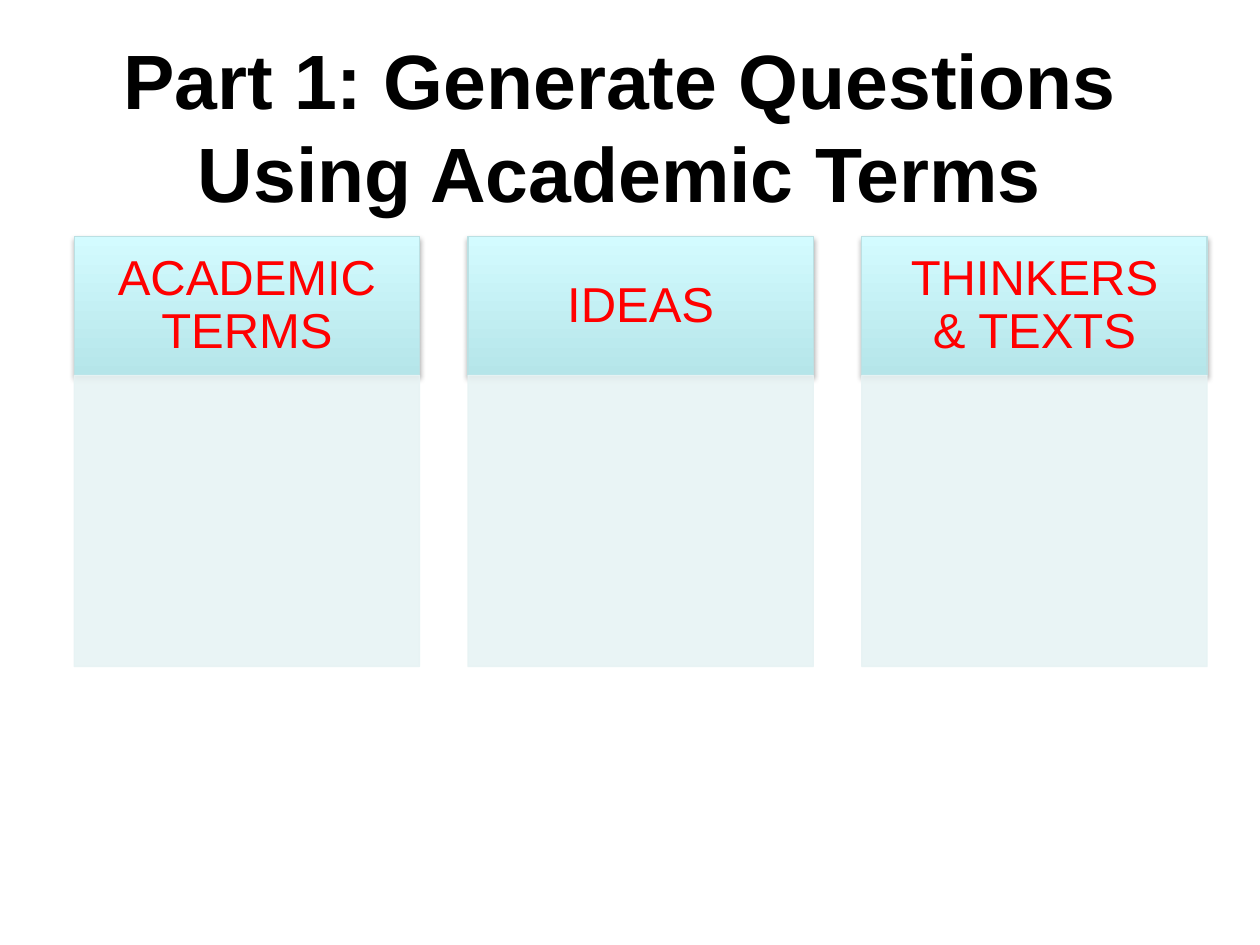
from lxml import etree
from pptx import Presentation
from pptx import util as u
from pptx.dml.color import RGBColor
from pptx.enum import shapes, text
from pptx.oxml.ns import qn

BLACK = RGBColor(0x00, 0x00, 0x00)
RED = RGBColor(0xFF, 0x00, 0x00)
AQUA_DARK = RGBColor(0xB5, 0xE5, 0xE9)
AQUA_LIGHT = RGBColor(0xD3, 0xFB, 0xFF)
AQUA_LINE = RGBColor(0xBB, 0xE0, 0xE3)
PALE = RGBColor(0xE7, 0xF3, 0xF4)

HEADINGS = ("ACADEMIC TERMS", "IDEAS", "THINKERS & TEXTS")
LEFT, RIGHT = 0.59, 9.58
COLUMN_W = 2.74
HEADER_TOP, HEADER_H, BODY_H = 1.88, 1.1, 2.31


def write(sp, content, size, color, bold=False, spacing=1.0, inset=(0.1, 0.05)):
    tf = sp.text_frame
    tf.word_wrap = True
    tf.vertical_anchor = text.MSO_ANCHOR.MIDDLE
    tf.margin_left = tf.margin_right = u.Inches(inset[0])
    tf.margin_top = tf.margin_bottom = u.Inches(inset[1])
    p = tf.paragraphs[0]
    p.alignment = text.PP_ALIGN.CENTER
    p.line_spacing = spacing
    r = p.add_run()
    r.text = content
    r.font.name = "Arial"
    r.font.size = u.Pt(size)
    r.font.bold = bold
    r.font.color.rgb = color


def set_alpha(fill_parent, percent):
    for color in fill_parent.iter(qn("a:srgbClr")):
        etree.SubElement(color, qn("a:alpha"), val=str(percent * 1000))


def add_shadow(sp, blur, distance, percent):
    effects = sp._element.spPr.find(qn("a:effectLst"))
    shadow = etree.SubElement(
        effects, qn("a:outerShdw"), blurRad=str(u.Pt(blur)),
        dist=str(u.Pt(distance)), dir="5400000", rotWithShape="0")
    etree.SubElement(shadow, qn("a:srgbClr"), val=str(BLACK))
    set_alpha(shadow, percent)


class Deck:
    """Holds the style and the current slide, and draws its elements."""

    def __init__(self):
        self.prs = Presentation()
        self.prs.slide_width = u.Inches(10)
        self.prs.slide_height = u.Inches(7.5)
        self.s = self.prs.slides.add_slide(self.prs.slide_layouts[6])

    def title(self, content, x, y, w, h):
        sp = self.s.shapes.add_textbox(*map(u.Inches, (x, y, w, h)))
        write(sp, content, 44, BLACK, bold=True)

    def box(self, x, y, w, h, line):
        sp = self.s.shapes.add_shape(
            shapes.MSO_SHAPE.RECTANGLE, *map(u.Inches, (x, y, w, h)))
        sp.shadow.inherit = False
        sp.line.color.rgb = line
        sp.line.width = u.Pt(0.75)
        return sp

    def header(self, content, x, y, w, h):
        sp = self.box(x, y, w, h, AQUA_LINE)
        sp.fill.gradient()
        sp.fill.gradient_angle = 90
        for stop, position, color in zip(
                sp.fill.gradient_stops, (0, 1), (AQUA_DARK, AQUA_LIGHT)):
            stop.position = position
            stop.color.rgb = color
        add_shadow(sp, 3.1, 1.8, 35)
        write(sp, content, 28, RED, spacing=0.9, inset=(0.22, 0.12))

    def body(self, x, y, w, h):
        sp = self.box(x, y, w, h, PALE)
        sp.fill.solid()
        sp.fill.fore_color.rgb = PALE
        set_alpha(sp._element.spPr, 90)


def main():
    deck = Deck()
    deck.title("Part 1: Generate Questions Using Academic Terms",
               0.67, 0.58, 8.5, 0.83)
    pitch = (RIGHT - LEFT - COLUMN_W) / (len(HEADINGS) - 1)
    for i, heading in enumerate(HEADINGS):
        x = LEFT + i * pitch
        deck.header(heading, x, HEADER_TOP, COLUMN_W, HEADER_H)
        deck.body(x, HEADER_TOP + HEADER_H, COLUMN_W, BODY_H)
    deck.prs.save("out.pptx")


if __name__ == "__main__":
    main()
